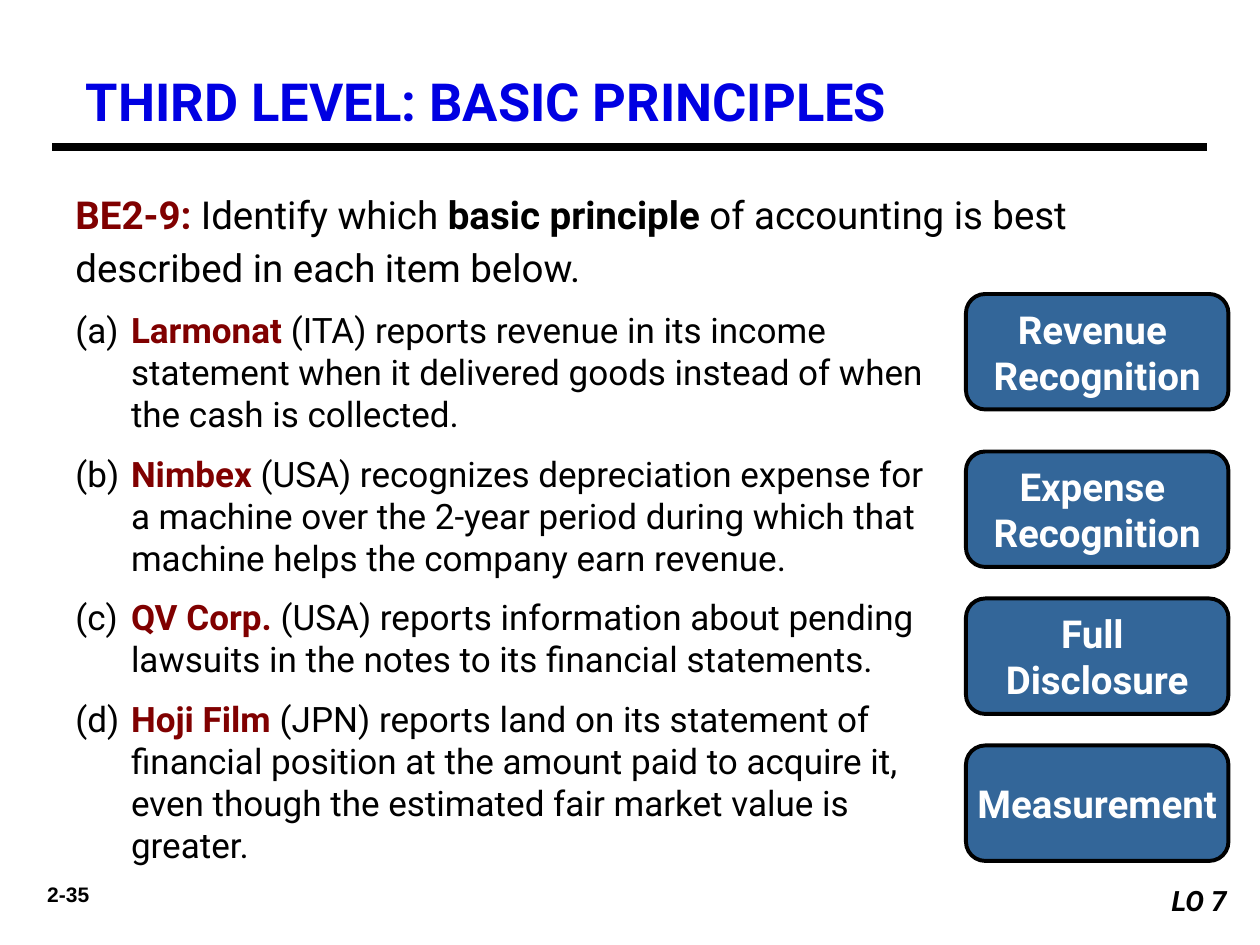
from dataclasses import dataclass

from lxml.etree import SubElement
from pptx import Presentation
from pptx.dml.color import RGBColor
from pptx.enum.shapes import MSO_CONNECTOR, MSO_SHAPE
from pptx.enum.text import MSO_ANCHOR, PP_ALIGN
from pptx.oxml.ns import qn
from pptx.util import Pt


@dataclass(frozen=True)
class Theme:
    body: str = "Roboto"
    footer: str = "Arial"
    title: str = "0000E2"
    accent: str = "800000"
    button: str = "336699"
    ink: str = "000000"
    paper: str = "FFFFFF"
    title_size: int = 30
    lead_size: int = 22
    item_size: int = 20
    mark_size: int = 16
    number_size: int = 12


T = Theme()
SCALE = 7620


def px(n):
    return n * SCALE


def rgb(value):
    return RGBColor.from_string(value)


def add_text(p, text, size, color=T.ink, bold=False, italic=False, font=T.body):
    r = p.add_run()
    r.text = text
    r.font.name = font
    r.font.size = Pt(size)
    r.font.bold = bold
    r.font.italic = italic
    r.font.color.rgb = rgb(color)


def add_box(s, box):
    tf = s.shapes.add_textbox(*map(px, box)).text_frame
    tf.word_wrap = True
    return tf


def add_paragraph(tf, index):
    return tf.add_paragraph() if index else tf.paragraphs[0]


def add_shape(s, kind, box, fill):
    sp = s.shapes.add_shape(kind, *map(px, box))
    sp.shadow.inherit = False
    sp.fill.solid()
    sp.fill.fore_color.rgb = rgb(fill)
    return sp


def add_header(s, box, text):
    x, y, w, h = box
    p = add_box(s, (x + 20, y, w - 20, h - 7)).paragraphs[0]
    add_text(p, text, T.title_size, T.title, bold=True)
    rule = s.shapes.add_connector(
        MSO_CONNECTOR.STRAIGHT, px(x), px(y + h), px(x + w), px(y + h))
    rule.line.color.rgb = rgb(T.ink)
    rule.line.width = Pt(4.5)
    SubElement(rule.element.spPr, qn("a:effectLst"))


def add_lead(s, box, runs):
    p = add_box(s, box).paragraphs[0]
    p.line_spacing = 1.14
    for text, style in runs:
        add_text(p, text, T.lead_size, **style)


def add_items(s, box, items):
    tf = add_box(s, box)
    for i, (company, text) in enumerate(items):
        p = add_paragraph(tf, i)
        p.space_before = Pt(10 if i else 0)
        pPr = p._p.get_or_add_pPr()
        pPr.set("marL", str(px(53)))
        pPr.set("indent", str(px(-53)))
        add_text(p, f"({'abcd'[i]}) \t", T.item_size)
        add_text(p, company + " ", T.item_size, T.accent, bold=True)
        add_text(p, text, T.item_size)


def add_button(s, box, lines):
    sp = add_shape(s, MSO_SHAPE.FLOWCHART_ALTERNATE_PROCESS, box, T.button)
    sp.line.color.rgb = rgb(T.ink)
    sp.line.width = Pt(2.25)
    tf = sp.text_frame
    tf.word_wrap = False
    tf.vertical_anchor = MSO_ANCHOR.MIDDLE
    for i, line in enumerate(lines):
        p = add_paragraph(tf, i)
        p.alignment = PP_ALIGN.CENTER
        add_text(p, line, T.lead_size, T.paper, bold=True)


def add_answers(s, box, answers):
    x, y, w, h = box
    for top, lines in answers:
        add_button(s, (x, y + top, w, h), lines)


def add_footer(s, box, number, mark):
    x, y, w, h = box
    p = add_box(s, (x, y, 110, h - 8)).paragraphs[0]
    p.alignment = PP_ALIGN.CENTER
    add_text(p, number, T.number_size, bold=True, font=T.footer)
    sp = add_shape(s, MSO_SHAPE.RECTANGLE, (x + w - 150, y + 2, 150, h), T.paper)
    sp.line.fill.background()
    tf = sp.text_frame
    tf.vertical_anchor = MSO_ANCHOR.TOP
    p = tf.paragraphs[0]
    p.alignment = PP_ALIGN.RIGHT
    add_text(p, mark, T.mark_size, bold=True, italic=True)


def main():
    prs = Presentation()
    prs.slide_width, prs.slide_height = px(1200), px(900)
    s = prs.slides.add_slide(prs.slide_layouts[6])
    add_footer(s, (10, 834, 1170, 44), "2-35", "LO 7")
    add_lead(s, (60, 170, 990, 114), [
        ("BE2-9:", {"color": T.accent, "bold": True}),
        (" Identify which ", {}),
        ("basic principle ", {"bold": True}),
        ("of accounting is best described in each item below.", {}),
    ])
    add_items(s, (60, 288, 840, 552), [
        ("Larmonat", "(ITA) reports revenue in its income statement when it "
         "delivered goods instead of when the cash is collected."),
        ("Nimbex", "(USA) recognizes depreciation expense for a machine over "
         "the 2-year period during which that machine helps the company "
         "earn revenue."),
        ("QV Corp.", "(USA) reports information about pending lawsuits in the "
         "notes to its financial statements."),
        ("Hoji Film", "(JPN) reports land on its statement of financial "
         "position at the amount paid to acquire it, even though the "
         "estimated fair market value is greater."),
    ])
    add_answers(s, (920, 280, 250, 110), [
        (0, ["Revenue ", "Recognition"]),
        (150, ["Expense ", "Recognition"]),
        (290, ["Full ", "Disclosure"]),
        (430, ["Measurement"]),
    ])
    add_header(s, (50, 60, 1100, 80), "THIRD LEVEL: BASIC PRINCIPLES")
    prs.save("out.pptx")


if __name__ == "__main__":
    main()
